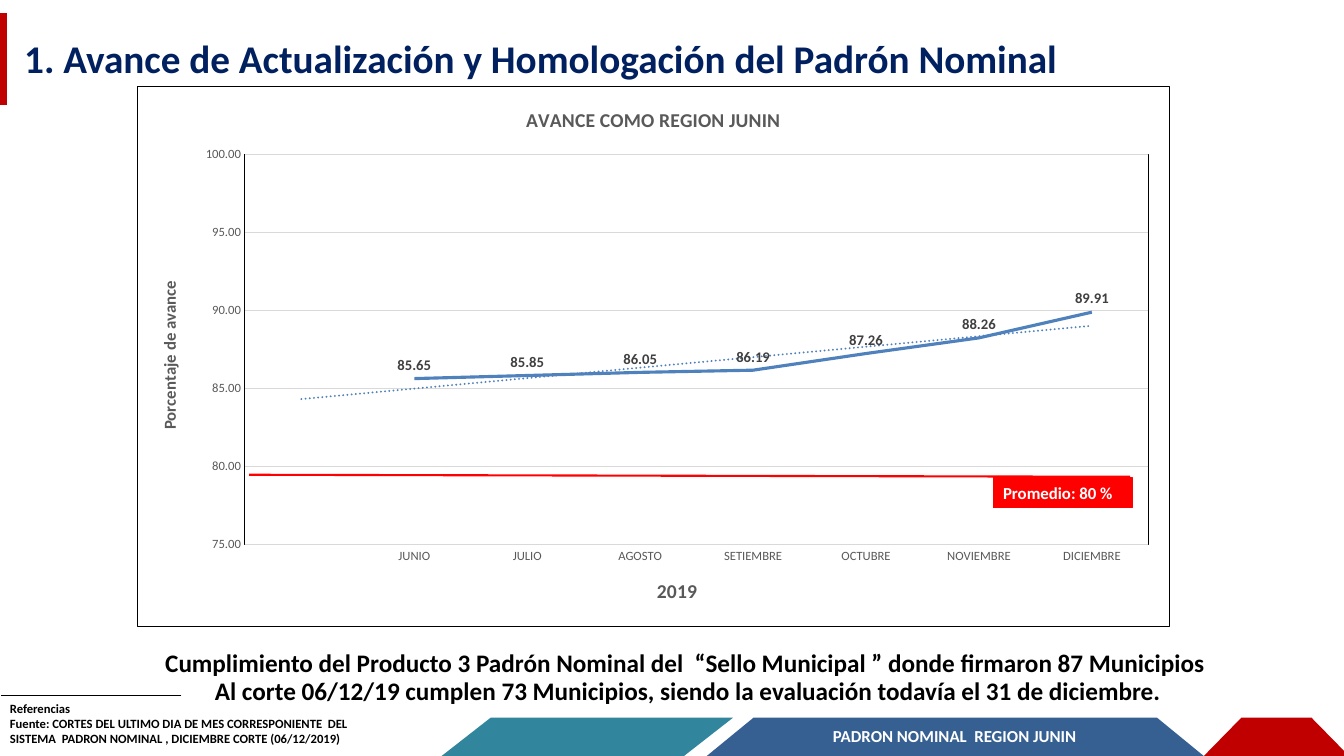
from pptx import Presentation
from pptx.chart.data import CategoryChartData
from pptx.dml.color import RGBColor
from pptx.enum.chart import XL_CHART_TYPE, XL_LABEL_POSITION as LABEL, XL_TICK_MARK as TICK
from pptx.enum.shapes import MSO_CONNECTOR, MSO_SHAPE as SHAPE
from pptx.enum.text import MSO_ANCHOR as ANCHOR, MSO_AUTO_SIZE, PP_ALIGN as ALIGN
from pptx.oxml import parse_xml
from pptx.oxml.ns import nsdecls, qn
from pptx.util import Inches, Pt

WHITE = RGBColor(0xFF, 0xFF, 0xFF)
BLACK = RGBColor(0, 0, 0)
NAVY = RGBColor(0x00, 0x20, 0x60)
BLUE = RGBColor(0x37, 0x60, 0x92)
SERIES_BLUE = RGBColor(0x4F, 0x81, 0xBD)
TEAL = RGBColor(0x31, 0x85, 0x9C)
DARK_RED = RGBColor(0xC0, 0x00, 0x00)
RED = RGBColor(0xFF, 0x00, 0x00)
GRAY = RGBColor(0x59, 0x59, 0x59)
LABEL_GRAY = RGBColor(0x40, 0x40, 0x40)
GRID_GRAY = RGBColor(0xD9, 0xD9, 0xD9)


def style_font(font, size, color, bold=True):
    font.name = "Calibri"
    font.size = Pt(size)
    font.bold = bold
    font.color.rgb = color


def write(shape, lines, size, color, align=ALIGN.LEFT, anchor=ANCHOR.TOP, spacing=None):
    frame = shape.text_frame
    frame.word_wrap = True
    frame.auto_size = MSO_AUTO_SIZE.NONE
    frame.vertical_anchor = anchor
    frame.text = "\n".join(lines)
    for paragraph in frame.paragraphs:
        paragraph.alignment = align
        paragraph.line_spacing = spacing
        style_font(paragraph.font, size, color)


presentation = Presentation()
presentation.slide_width = Inches(13.33)
presentation.slide_height = Inches(7.5)
slide = presentation.slides.add_slide(presentation.slide_layouts[5])
shapes = slide.shapes

title = shapes.title
title.left, title.top = Inches(0.14), Inches(0.29)
title.width, title.height = Inches(11.46), Inches(0.57)
write(title, ["1. Avance de Actualización y Homologación del Padrón Nominal"], 28, NAVY)

for preset, left, top, width, height, color, adjustment in [
    (SHAPE.TRAPEZOID, 7.01, 7.12, 4.93, 0.38, BLUE, 1.22),
    (SHAPE.TRAPEZOID, 11.94, 7.12, 1.44, 0.38, DARK_RED, 0.98),
    (SHAPE.PARALLELOGRAM, 4.38, 7.12, 2.89, 0.38, TEAL, 1.28),
    (SHAPE.RECTANGLE, 0, 0.13, 0.07, 0.91, DARK_RED, None),
]:
    band = shapes.add_shape(preset, Inches(left), Inches(top), Inches(width), Inches(height))
    band.shadow.inherit = False
    band.fill.solid()
    band.fill.fore_color.rgb = color
    band.line.fill.background()
    if adjustment:
        band.adjustments[0] = adjustment

footer = shapes.add_textbox(Inches(7.22), Inches(7.1), Inches(4.5), Inches(0.4))
write(footer, ["PADRON NOMINAL  REGION JUNIN"], 12, WHITE, ALIGN.CENTER, ANCHOR.MIDDLE)

references = shapes.add_textbox(Inches(0), Inches(6.9), Inches(3.6), Inches(0.56))
write(references, [
    "Referencias",
    "Fuente: CORTES DEL ULTIMO DIA DE MES CORRESPONIENTE  DEL SISTEMA  PADRON NOMINAL , "
    "DICIEMBRE CORTE (06/12/2019)",
], 9, BLACK)

chart_data = CategoryChartData(number_format="0.00")
chart_data.categories = ["", "JUNIO", "JULIO", "AGOSTO", "SETIEMBRE", "OCTUBRE", "NOVIEMBRE", "DICIEMBRE"]
chart_data.add_series("Series 1", [None, 85.65, 85.85, 86.05, 86.19, 87.26, 88.26, 89.91])
chart = shapes.add_chart(
    XL_CHART_TYPE.LINE, Inches(1.36), Inches(0.85), Inches(10.24), Inches(5.37), chart_data
).chart
style_font(chart.font, 10, BLACK, False)
chart.has_legend = False
chart.has_title = True
chart.chart_title.include_in_layout = False

category_axis, value_axis = chart.category_axis, chart.value_axis
for titled, text, size in [
    (chart.chart_title, "AVANCE COMO REGION JUNIN", 14),
    (category_axis.axis_title, "2019", 14),
    (value_axis.axis_title, "Porcentaje de avance", 12),
]:
    titled.text_frame.text = text
    style_font(titled.text_frame.paragraphs[0].font, size, GRAY)

for axis in (category_axis, value_axis):
    axis.major_tick_mark = axis.minor_tick_mark = TICK.NONE
    style_font(axis.tick_labels.font, 9, GRAY, False)
category_axis.format.line.color.rgb = GRID_GRAY
category_axis.format.line.width = Pt(0.75)
value_axis.minimum_scale, value_axis.maximum_scale, value_axis.major_unit = 75, 100, 5
value_axis.tick_labels.number_format = "0.00"
value_axis.tick_labels.number_format_is_linked = False
value_axis.format.line.fill.background()
value_axis.major_gridlines.format.line.color.rgb = GRID_GRAY
value_axis.major_gridlines.format.line.width = Pt(0.75)

plot = chart.plots[0]
plot.vary_by_categories = False
series = plot.series[0]
series.smooth = False
series.format.line.color.rgb = SERIES_BLUE
series.format.line.width = Pt(2.25)
labels = series.data_labels
labels.show_value = True
labels.position = LABEL.ABOVE
labels.number_format = "0.00"
labels.number_format_is_linked = False
style_font(labels.font, 10.5, LABEL_GRAY)

trend_line = parse_xml(
    f'<c:trendline {nsdecls("c", "a")}><c:spPr><a:ln w="19050" cap="rnd"><a:solidFill>'
    f'<a:srgbClr val="{SERIES_BLUE}"/></a:solidFill><a:prstDash val="sysDot"/></a:ln></c:spPr>'
    '<c:trendlineType val="linear"/><c:dispRSqr val="0"/><c:dispEq val="0"/></c:trendline>'
)
series._element.find(qn("c:cat")).addprevious(trend_line)

border = (
    f'<c:spPr {nsdecls("c", "a")}><a:noFill/><a:ln w="9525"><a:solidFill>'
    f'<a:srgbClr val="{BLACK}"/></a:solidFill></a:ln></c:spPr>'
)
chart_element = chart._chartSpace.find(qn("c:chart"))
chart_element.addnext(parse_xml(border))
plot_area = chart_element.find(qn("c:plotArea"))
plot_area.append(parse_xml(border))
for layout in plot_area.findall(qn("c:layout")):
    plot_area.remove(layout)
plot_area.insert(0, parse_xml(
    f'<c:layout {nsdecls("c")}><c:manualLayout><c:layoutTarget val="inner"/>'
    '<c:xMode val="edge"/><c:yMode val="edge"/><c:x val="0.104"/><c:y val="0.127"/>'
    '<c:w val="0.876"/><c:h val="0.722"/></c:manualLayout></c:layout>'
))

for x1, y1, x2, y2, color, width in [
    (1.8, 6.9, 0.01, 6.9, BLACK, 0.75),
    (2.47, 4.71, 11.21, 4.73, RED, 1.5),
]:
    line = shapes.add_connector(MSO_CONNECTOR.STRAIGHT, Inches(x1), Inches(y1), Inches(x2), Inches(y2))
    line.line.color.rgb = color
    line.line.width = Pt(width)
    line._element.spPr.append(parse_xml(f'<a:effectLst {nsdecls("a")}/>'))

average = shapes.add_shape(SHAPE.RECTANGLE, Inches(9.85), Inches(4.74), Inches(1.38), Inches(0.3))
average.shadow.inherit = False
average.fill.solid()
average.fill.fore_color.rgb = RED
average.line.color.rgb = RED
average.line.width = Pt(0.75)
write(average, ["Promedio: 80 %"], 12, WHITE)

summary = shapes.add_textbox(Inches(0.74), Inches(6.47), Inches(12.17), Inches(0.52))
write(summary, [
    "Cumplimiento del Producto 3 Padrón Nominal del  “Sello Municipal ” donde firmaron 87 Municipios ",
    "Al corte 06/12/19 cumplen 73 Municipios, siendo la evaluación todavía el 31 de diciembre.",
], 18, BLACK, ALIGN.CENTER, ANCHOR.MIDDLE, 0.9)

presentation.save("out.pptx")
